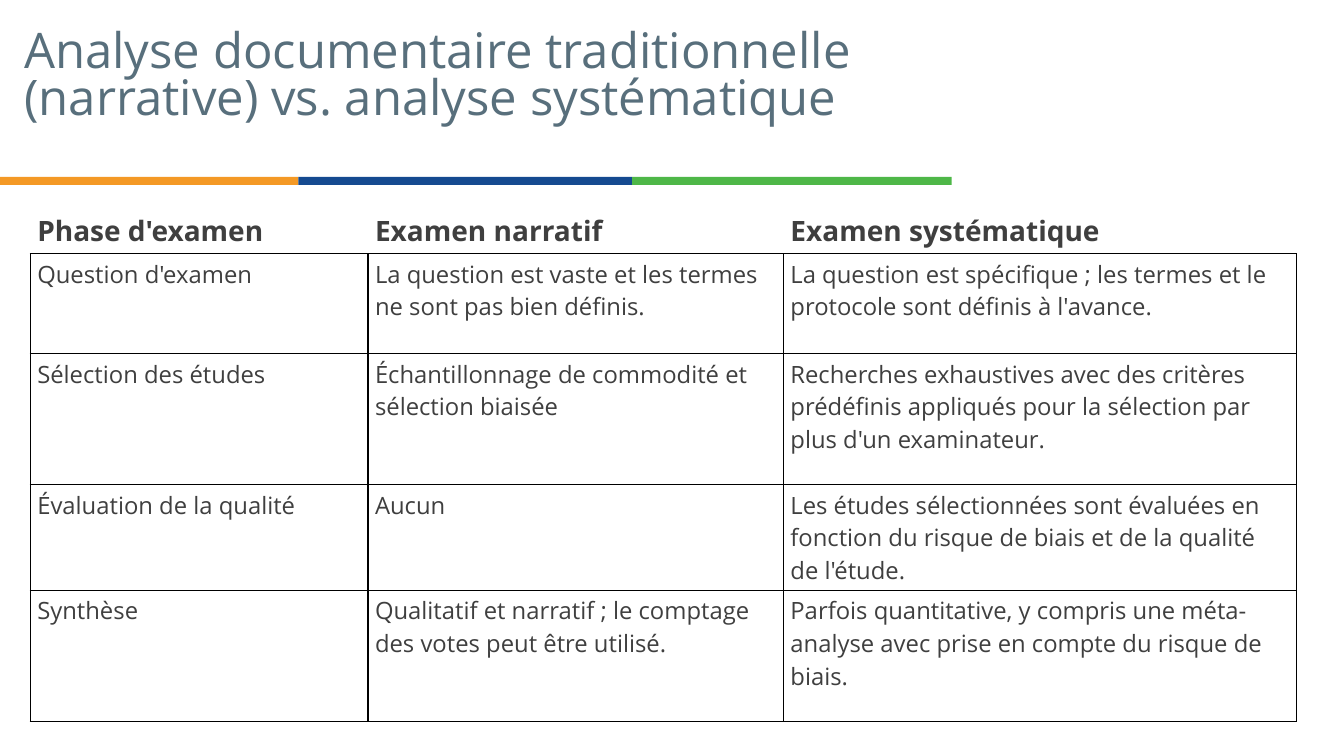
from dataclasses import dataclass
from itertools import accumulate

from lxml.etree import SubElement
from pptx import Presentation
from pptx.dml.color import RGBColor
from pptx.enum.shapes import MSO_SHAPE
from pptx.enum.text import MSO_ANCHOR, MSO_AUTO_SIZE, PP_ALIGN
from pptx.oxml.ns import qn
from pptx.util import Inches, Pt


@dataclass(frozen=True)
class Theme:
    """Colours, font and type sizes of the deck."""
    face: str = "Open Sans"
    title: str = "586F7C"
    text: str = "3F3F3F"
    rule: str = "000000"
    paper: str = "FFFFFF"
    bars: tuple = ("F49925", "154A90", "4EB748")
    large: int = 35
    head: int = 20
    body: int = 17


class Deck:
    """Builds one slide on a grid of 100 columns by 100 rows."""

    def __init__(self, theme):
        """Open a wide deck with one title slide."""
        self.theme = theme
        self.prs = Presentation()
        self.prs.slide_width, self.prs.slide_height = Inches(13.33), Inches(7.5)
        self.slide = self.prs.slides.add_slide(self.prs.slide_layouts[5])

    def col(self, n):
        """Turn columns into a length."""
        return round(self.prs.slide_width * n / 100)

    def row(self, n):
        """Turn rows into a length."""
        return round(self.prs.slide_height * n / 100)

    def style(self, frame, size, color, bold=False):
        """Format every run of a text frame."""
        for para in frame.paragraphs:
            para.alignment = PP_ALIGN.LEFT
            for run in para.runs:
                font = run.font
                font.name, font.size, font.bold = self.theme.face, Pt(size), bold
                font.color.rgb = RGBColor.from_string(color)

    def title(self, text, left, top, width, height):
        """Fill and place the title."""
        shape = self.slide.shapes.title
        shape.left, shape.top = self.col(left), self.row(top)
        shape.width, shape.height = self.col(width), self.row(height)
        frame = shape.text_frame
        frame.text = text
        frame.word_wrap = True
        frame.auto_size = MSO_AUTO_SIZE.TEXT_TO_FIT_SHAPE
        frame.vertical_anchor = MSO_ANCHOR.MIDDLE
        frame.paragraphs[0].line_spacing = 0.9
        self.style(frame, self.theme.large, self.theme.title)

    def bars(self, top, height, widths):
        """Lay coloured bars end to end from the left edge."""
        lefts = accumulate(widths, initial=0)
        for left, width, color in zip(lefts, widths, self.theme.bars):
            bar = self.slide.shapes.add_shape(
                MSO_SHAPE.RECTANGLE, self.col(left), self.row(top),
                self.col(width), self.row(height))
            bar.shadow.inherit = False
            bar.fill.solid()
            bar.fill.fore_color.rgb = RGBColor.from_string(color)
            bar.line.fill.background()

    def border(self, cell, sides):
        """Draw thin rules on the given sides of a cell."""
        props = cell._tc.get_or_add_tcPr()
        for side in sides:
            line = SubElement(props, qn(f"a:ln{side}"), w=str(Pt(1)))
            fill = SubElement(line, qn("a:solidFill"))
            SubElement(fill, qn("a:srgbClr"), val=self.theme.rule)

    def table(self, data, left, top, widths, heights):
        """Add a ruled table with an open, bold header row."""
        theme = self.theme
        table = self.slide.shapes.add_table(
            len(data), len(widths), self.col(left), self.row(top),
            self.col(sum(widths)), self.row(sum(heights))).table
        table.first_row = table.horz_banding = False
        for column, width in zip(table.columns, widths):
            column.width = self.col(width)
        for r, (texts, height) in enumerate(zip(data, heights)):
            table.rows[r].height = self.row(height)
            head = r == 0
            for c, text in enumerate(texts):
                cell = table.cell(r, c)
                cell.text = text
                cell.margin_left = cell.margin_right = Inches(0.07)
                cell.margin_top = cell.margin_bottom = Inches(0.04)
                self.border(cell, "B" if head else "LRTB")
                cell.fill.solid()
                cell.fill.fore_color.rgb = RGBColor.from_string(theme.paper)
                size = theme.head if head else theme.body
                self.style(cell.text_frame, size, theme.text, head)


ROWS = [
    ("Phase d'examen", "Examen narratif", "Examen systématique"),
    ("Question d'examen",
     "La question est vaste et les termes ne sont pas bien définis.",
     "La question est spécifique ; les termes et le protocole sont définis à l'avance."),
    ("Sélection des études",
     "Échantillonnage de commodité et sélection biaisée",
     "Recherches exhaustives avec des critères prédéfinis appliqués "
     "pour la sélection par plus d'un examinateur."),
    ("Évaluation de la qualité",
     "Aucun",
     "Les études sélectionnées sont évaluées en fonction du risque "
     "de biais et de la qualité de l'étude."),
    ("Synthèse",
     "Qualitatif et narratif ; le comptage des votes peut être utilisé.",
     "Parfois quantitative, y compris une méta-analyse avec prise en compte "
     "du risque de biais."),
]


def main():
    """Build and save the slide."""
    deck = Deck(Theme())
    deck.bars(23.4, 1.07, (22.2, 24.83, 23.78))
    deck.title("Analyse documentaire traditionnelle (narrative) vs. analyse systématique",
               1.05, 2.4, 78.84, 15.73)
    deck.table(ROWS, 2.25, 27.47, (25.13, 30.91, 38.18), (6, 13.2, 17.33, 13.2, 17.33))
    deck.prs.save("out.pptx")


if __name__ == "__main__":
    main()
